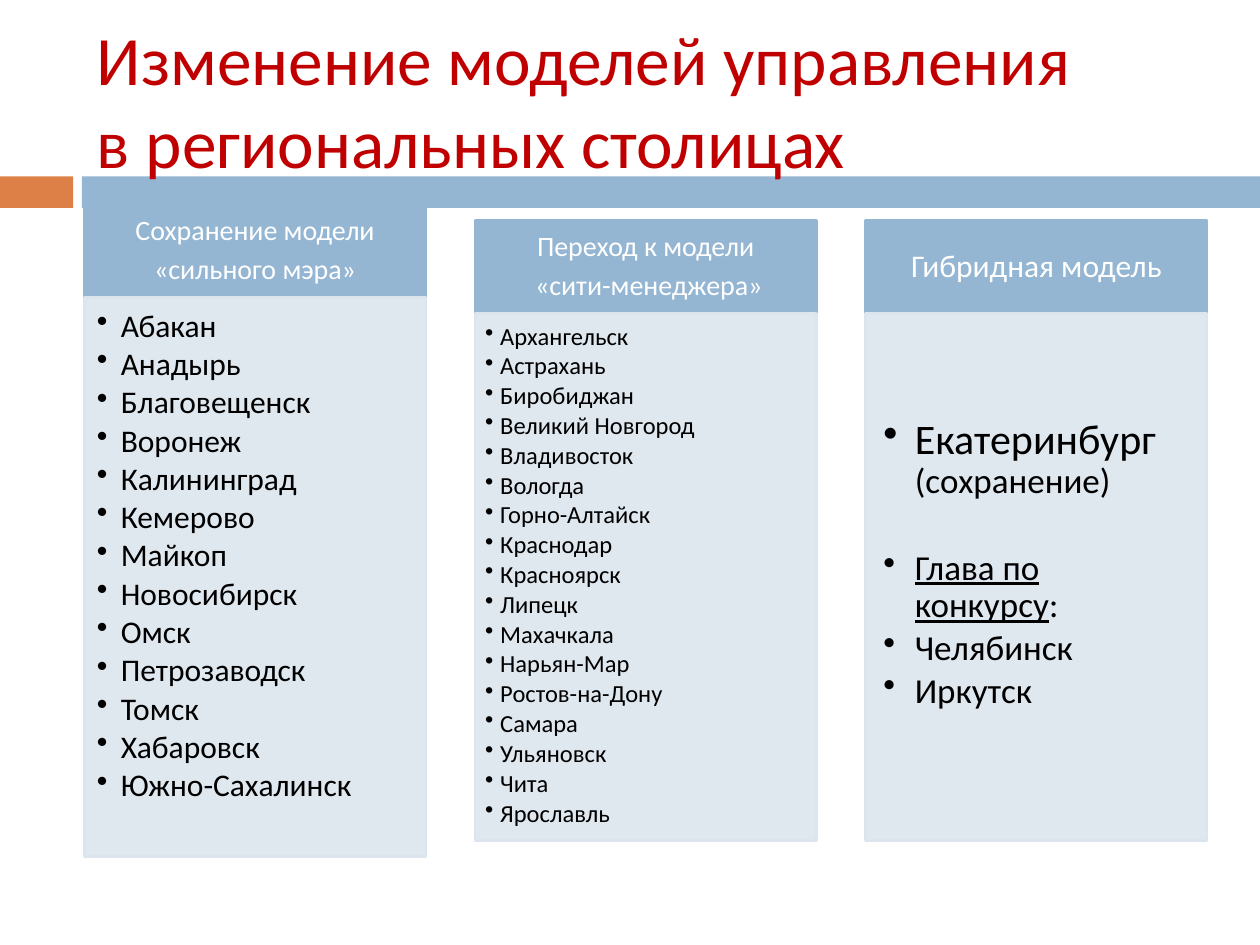
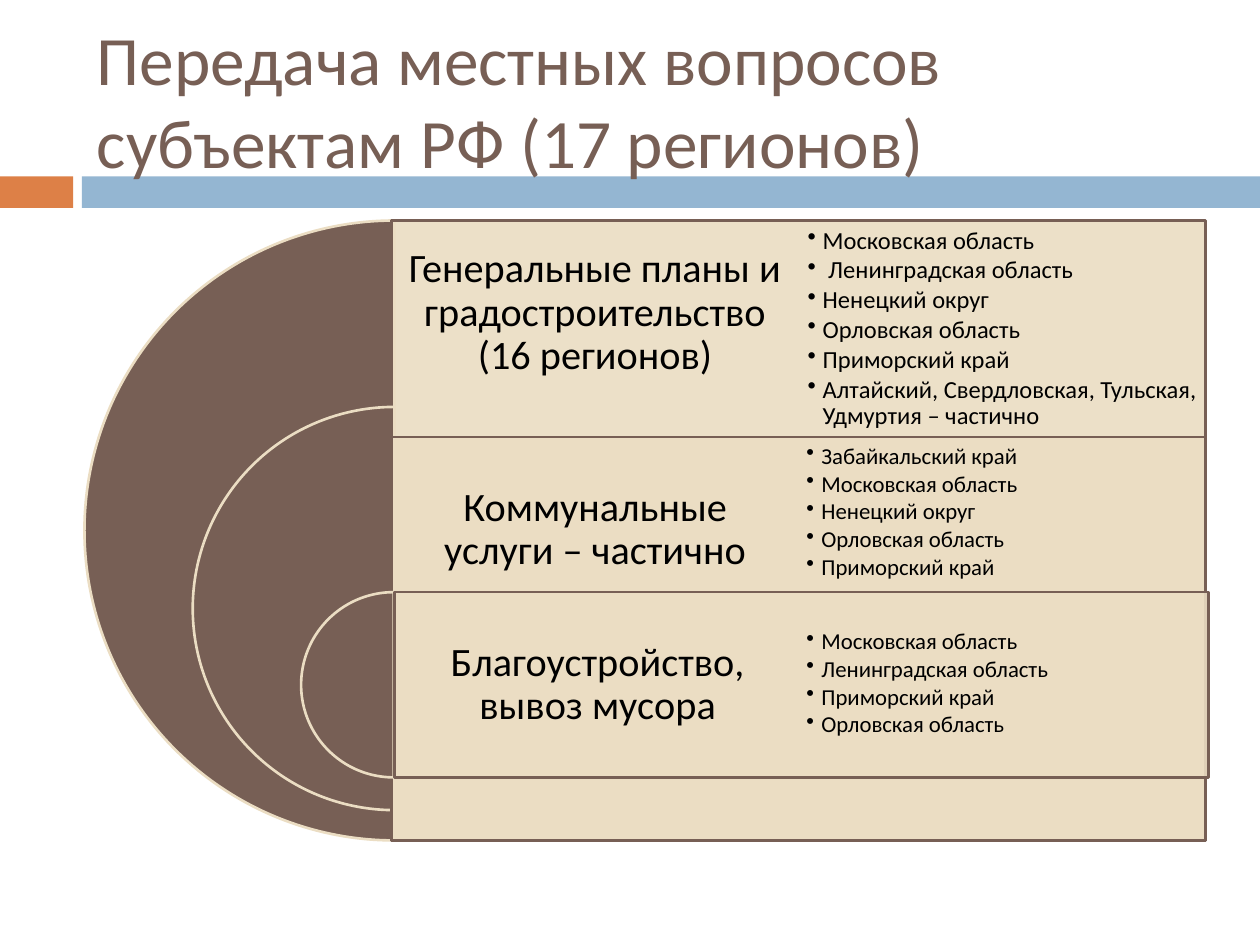
from pptx import Presentation
from pptx.dml.color import RGBColor
from pptx.enum.shapes import MSO_SHAPE
from pptx.enum.text import MSO_ANCHOR, PP_ALIGN
from pptx.oxml.ns import qn
from pptx.util import Inches, Pt
from lxml.etree import SubElement

BLUE, ORANGE, PALE = "94B6D2", "DD8047", "DCE5EE"
BROWN, SAND, RED = "775F55", "EBDDC3", "C00000"
BLACK, WHITE = "000000", "FFFFFF"


def draw(slide, kind, place, fill, edge=None, alpha=None):
    """Add a shape; alpha is the opacity of its fill in percent."""
    shape = slide.shapes.add_shape(kind, *map(Inches, place))
    shape.shadow.inherit = False
    shape.fill.solid()
    shape.fill.fore_color.rgb = RGBColor.from_string(fill)
    if alpha:
        tint = shape.fill._xPr.find(qn("a:solidFill"))[0]
        SubElement(tint, qn("a:alpha"), val=str(alpha * 1000))
    if edge:
        shape.line.color.rgb = RGBColor.from_string(edge)
        shape.line.width = Pt(1.5)
    else:
        shape.line.fill.background()
    return shape


def write(shape, lines, size, color=BLACK, inset=(0.1, 0.05, 0.1, 0.05), indent=0,
          gap=0.0, space=0.9, align=PP_ALIGN.LEFT, anchor=MSO_ANCHOR.MIDDLE):
    """Fill a shape with lines: a string, or (text, font values) pairs; an indent adds bullets."""
    frame = shape.text_frame
    left, top, right, bottom = map(Inches, inset)
    look = {"word_wrap": True, "vertical_anchor": anchor, "margin_left": left,
            "margin_top": top, "margin_right": right, "margin_bottom": bottom}
    for name, value in look.items():
        setattr(frame, name, value)
    for i, line in enumerate(lines):
        para = frame.paragraphs[0] if i == 0 else frame.add_paragraph()
        style = {"alignment": align, "line_spacing": space,
                 "space_before": Pt(0), "space_after": Pt(gap * size)}
        for name, value in style.items():
            setattr(para, name, value)
        if indent:
            props = para._p.get_or_add_pPr()
            props.set("marL", str(Inches(indent)))
            props.set("indent", str(-Inches(indent)))
            SubElement(props, qn("a:buChar"), char="•")
        for text, extra in [(line, {})] if isinstance(line, str) else line:
            run = para.add_run()
            run.text = text
            run.font.color.rgb = RGBColor.from_string(color)
            for name, value in ({"name": "Calibri", "size": Pt(size)} | extra).items():
                setattr(run.font, name, value)
    return frame


deck = Presentation()
deck.slide_width, deck.slide_height = Inches(10), Inches(7.5)

HEAD = {"color": WHITE, "gap": 0.32, "align": PP_ALIGN.CENTER}
LABEL = {"gap": 0.32, "align": PP_ALIGN.CENTER, "inset": [0.1] * 4}
LIST = {"gap": 0.135, "anchor": MSO_ANCHOR.TOP}

# Shared bands and titles
titles = [
    (["Изменение моделей управления", "в региональных столицах"], RED),
    (["Передача местных вопросов", "субъектам РФ (17 регионов)"], BROWN),
]
slides = []
for title, color in titles:
    slide = deck.slides.add_slide(deck.slide_layouts[6])
    draw(slide, MSO_SHAPE.RECTANGLE, (0, 1.4, 0.58, 0.25), ORANGE)
    draw(slide, MSO_SHAPE.RECTANGLE, (0.65, 1.4, 9.35, 0.25), BLUE)
    box = slide.shapes.add_textbox(*map(Inches, (0.67, 0.25, 8.92, 1.08)))
    write(box, title, 39.6, color, space=1.0)
    slides.append(slide)
models, powers = slides

# Slide 1: three columns of cities
strong = ["Абакан", "Анадырь", "Благовещенск", "Воронеж", "Калининград", "Кемерово",
          "Майкоп", "Новосибирск", "Омск", "Петрозаводск", "Томск", "Хабаровск",
          "Южно-Сахалинск"]
hired = ["Архангельск", "Астрахань", "Биробиджан", "Великий Новгород", "Владивосток",
         "Вологда", "Горно-Алтайск", "Краснодар", "Красноярск", "Липецк", "Махачкала",
         "Нарьян-Мар", "Ростов-на-Дону", "Самара", "Ульяновск", "Чита", "Ярославль"]
mixed = [[("Екатеринбург ", {"size": Pt(24)}), ("(сохранение)", {})],
         [("Глава по конкурсу", {"underline": True}), (":", {})],
         "Челябинск", "Иркутск"]
# head lines, head size, top, body height, cities, city size, indent, inset
columns = [
    (["Сохранение модели", "«сильного мэра»"], 16, 1.62, 4.44,
     strong, 18, 0.19, (0.1, 0.1, 0.14, 0.16)),
    (["Переход к модели", " «сити-менеджера»"], 16, 1.75, 4.18,
     hired, 14, 0.12, (0.08, 0.08, 0.11, 0.12)),
    (["Гибридная модель"], 18, 1.75, 4.18,
     mixed, 20, 0.25, (0.14, 0.83, 0.19, 0.21)),
]
WIDE, STEP, CAP = 2.71, 3.1, 0.74
for i, (head, big, top, tall, cities, size, indent, inset) in enumerate(columns):
    left = 0.67 + STEP * i
    cap = draw(models, MSO_SHAPE.RECTANGLE, (left, top, WIDE, CAP), BLUE, BLUE)
    write(cap, head, big, **HEAD)
    body = draw(models, MSO_SHAPE.RECTANGLE, (left, top + CAP, WIDE, tall), PALE, PALE, 90)
    frame = write(body, cities, size, inset=inset, indent=indent, **LIST)
# Set the hybrid model's second group apart
frame.paragraphs[1].space_before = Pt(25)

# Slide 2: nested half discs, each with a panel to its right
# disc left, top and size; panel left; label; list top, size and inset; regions
layers = [
    (0.67, 1.75, 4.92, 3.11, "Генеральные планы и градостроительство (16 регионов)",
     1.75, 14, (0.06, 0.06),
     ["Московская область", " Ленинградская область", "Ненецкий округ",
      "Орловская область", "Приморский край",
      "Алтайский, Свердловская, Тульская, Удмуртия – частично"]),
    (1.53, 3.23, 3.2, 3.11, "Коммунальные услуги – частично",
     3.23, 13, (0.05, 0.3),
     ["Забайкальский край", "Московская область", "Ненецкий округ",
      "Орловская область", "Приморский край"]),
    (2.39, 4.7, 1.47, 3.13, "Благоустройство, вывоз мусора",
     4.7, 13, (0.05, 0.3),
     ["Московская область", "Ленинградская область", "Приморский край",
      "Орловская область"]),
]
PANEL, HALF, ROW = 6.46, 3.23, 1.47
panel_tops = [1.75, 3.47, 4.7]
for (left, top, disc, edge, label, start, size, (side, lead), regions), y in zip(layers, panel_tops):
    pie = draw(powers, MSO_SHAPE.PIE, (left, top, disc, disc), BROWN, SAND)
    pie.adjustments[0], pie.adjustments[1] = 54, 162
    draw(powers, MSO_SHAPE.RECTANGLE, (edge, y, PANEL, disc), SAND, BROWN, 90)
    name = powers.shapes.add_textbox(*map(Inches, (edge, y, HALF, ROW)))
    write(name, [label], 23, **LABEL)
for (*_, start, size, (side, lead), regions) in layers:
    box = powers.shapes.add_textbox(*map(Inches, (6.35, start, HALF, ROW)))
    write(box, regions, size, inset=(side, lead, side, side), indent=0.12, **LIST)

deck.save("out.pptx")
